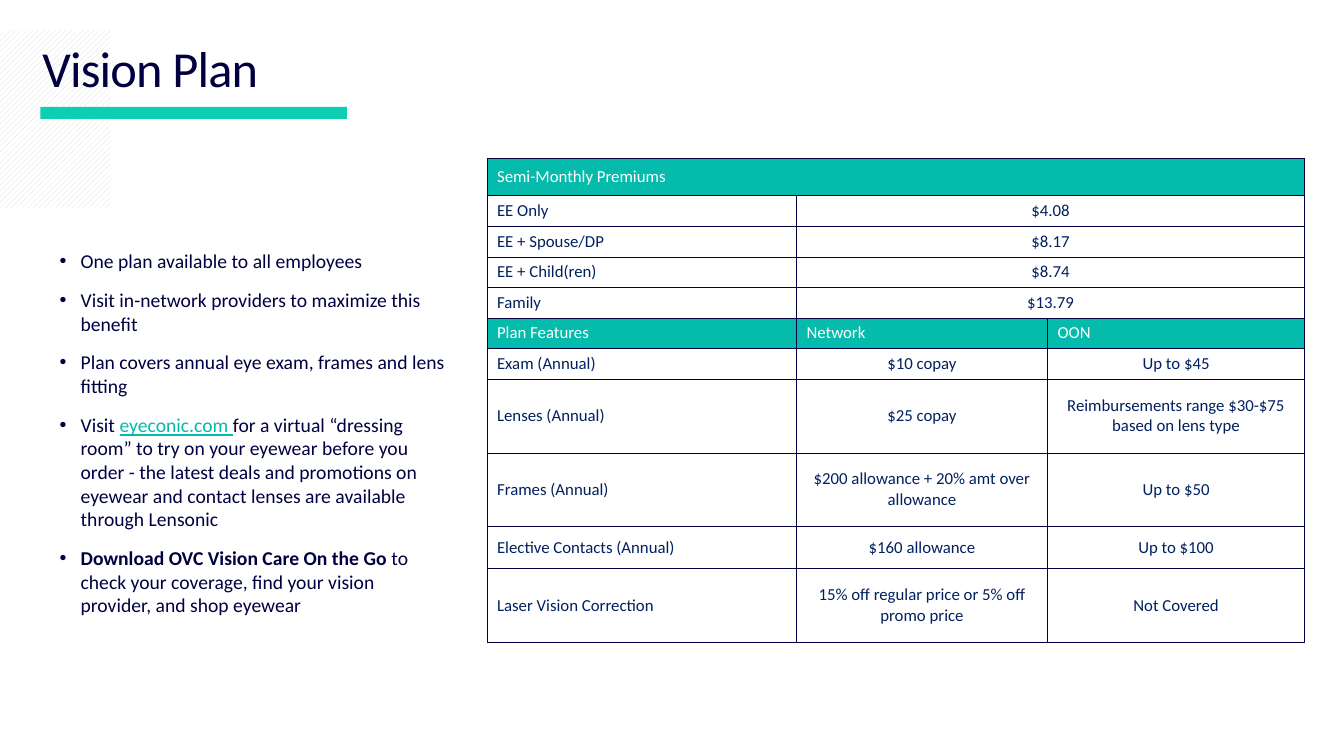
from dataclasses import dataclass, field
from typing import Any

from lxml.etree import SubElement
from pptx import Presentation
from pptx.dml.color import RGBColor
from pptx.enum.dml import MSO_PATTERN
from pptx.enum.shapes import MSO_SHAPE
from pptx.enum.text import MSO_ANCHOR, MSO_AUTO_SIZE, PP_ALIGN
from pptx.oxml import parse_xml
from pptx.oxml.ns import nsdecls, qn
from pptx.util import Inches, Pt

NAVY = RGBColor(0x00, 0x00, 0x41)
BLUE = RGBColor(0x00, 0x20, 0x60)
TEAL = RGBColor(0x05, 0xBB, 0xAC)
LINK = RGBColor(0x05, 0xBA, 0xAB)
ACCENT = RGBColor(0x0C, 0xCE, 0xB2)
GREY = RGBColor(0xD9, 0xD9, 0xD9)
WHITE = RGBColor(0xFF, 0xFF, 0xFF)
FONT = "Calibri"
COLUMNS = (3.07, 2.49, 2.55)


@dataclass
class Span:
    text: str
    color: RGBColor = NAVY
    format: dict[str, Any] = field(default_factory=dict)


@dataclass
class Row:
    cells: tuple[str, ...]
    height: float = 0.3
    header: bool = False


BULLETS = (
    (Span("One plan available to all employees"),),
    (Span("Visit in-network providers to maximize this benefit"),),
    (Span("Plan covers annual eye exam, frames and lens fitting"),),
    (
        Span("Visit "),
        Span("eyeconic.com ", LINK, {"underline": True}),
        Span(
            "for a virtual “dressing room” to try on your eyewear before you order - "
            "the latest deals and promotions on eyewear and contact lenses are "
            "available through Lensonic"
        ),
    ),
    (
        Span("Download OVC Vision Care On the Go ", format={"bold": True}),
        Span("to check your coverage, find your vision provider, and shop eyewear"),
    ),
)

ROWS = (
    Row(("Semi-Monthly Premiums",), 0.37, True),
    Row(("EE Only", "$4.08")),
    Row(("EE + Spouse/DP", "$8.17")),
    Row(("EE + Child(ren)", "$8.74")),
    Row(("Family", "$13.79")),
    Row(("Plan Features", "Network", "OON"), header=True),
    Row(("Exam (Annual)", "$10 copay", "Up to $45")),
    Row(("Lenses (Annual)", "$25 copay", "Reimbursements range $30-$75 based on lens type"), 0.73),
    Row(("Frames (Annual)", "$200 allowance + 20% amt over allowance", "Up to $50"), 0.73),
    Row(("Elective Contacts (Annual)", "$160 allowance", "Up to $100"), 0.42),
    Row(("Laser Vision Correction", "15% off regular price or 5% off promo price", "Not Covered"), 0.73),
)


def apply(target: Any, values: dict[str, Any]) -> None:
    for name, value in values.items():
        setattr(target, name, value)


def place(sp: Any, left: float, top: float, width: float, height: float) -> None:
    box = {"left": left, "top": top, "width": width, "height": height}
    apply(sp, {name: Inches(value) for name, value in box.items()})


def add_run(p: Any, span: Span, size: float) -> Any:
    r = p.add_run()
    r.text = span.text
    apply(r.font, {"name": FONT, "size": Pt(size), **span.format})
    r.font.color.rgb = span.color
    return r


def add_backdrop(s: Any, index: int, *box: float) -> Any:
    sp = s.shapes.add_shape(MSO_SHAPE.RECTANGLE, *map(Inches, box))
    sp.shadow.inherit = False
    sp.line.fill.background()
    s.shapes._spTree.insert(2 + index, sp._element)
    return sp


def add_decoration(s: Any) -> None:
    hatch = add_backdrop(s, 0, 0, 0.3, 1.1, 1.76).fill
    hatch.patterned()
    hatch.pattern = MSO_PATTERN.WIDE_UPWARD_DIAGONAL
    hatch.fore_color.rgb = GREY
    hatch.back_color.rgb = WHITE
    bar = add_backdrop(s, 1, 0.4, 1.06, 3.04, 0.12).fill
    bar.solid()
    bar.fore_color.rgb = ACCENT


def fill_title(sp: Any) -> None:
    place(sp, 0.32, 0.16, 10.02, 1.09)
    tf = sp.text_frame
    apply(tf, {"vertical_anchor": MSO_ANCHOR.MIDDLE, "auto_size": MSO_AUTO_SIZE.NONE})
    p = tf.paragraphs[0]
    apply(p, {"alignment": PP_ALIGN.LEFT, "line_spacing": 0.9})
    r = add_run(p, Span("Vision Plan"), 36)
    r.font._element.set("spc", "-60")


def fill_body(sp: Any) -> None:
    place(sp, 0.49, 2.42, 4.07, 4.16)
    tf = sp.text_frame
    apply(tf, {"vertical_anchor": MSO_ANCHOR.TOP, "auto_size": MSO_AUTO_SIZE.NONE, "word_wrap": True})
    for i, spans in enumerate(BULLETS):
        p = tf.add_paragraph() if i else tf.paragraphs[0]
        pPr = p._p.get_or_add_pPr()
        pPr.set("marL", str(Inches(0.21)))
        pPr.set("indent", str(-Inches(0.21)))
        SubElement(pPr, qn("a:buFont")).set("typeface", "Arial")
        SubElement(pPr, qn("a:buChar")).set("char", "•")
        apply(p, {"space_before": Pt(6 if i else 0), "space_after": Pt(5)})
        for span in spans:
            add_run(p, span, 14)


def add_borders(cell: Any) -> None:
    tcPr = cell._tc.get_or_add_tcPr()
    for i, side in enumerate(("lnL", "lnR", "lnT", "lnB")):
        tcPr.insert(i, parse_xml(
            f'<a:{side} {nsdecls("a")} w="{Pt(0.25)}"><a:solidFill>'
            f'<a:srgbClr val="{NAVY}"/></a:solidFill></a:{side}>'
        ))


def add_plan_table(s: Any) -> None:
    box = (4.83, 1.57, sum(COLUMNS), sum(row.height for row in ROWS))
    table = s.shapes.add_table(len(ROWS), len(COLUMNS), *map(Inches, box)).table
    apply(table, {"first_row": False, "horz_banding": False})
    for column, width in zip(table.columns, COLUMNS):
        column.width = Inches(width)
    for i, row in enumerate(ROWS):
        table.rows[i].height = Inches(row.height)
        for j in range(len(COLUMNS)):
            cell = table.cell(i, j)
            cell.fill.solid()
            cell.fill.fore_color.rgb = TEAL if row.header else WHITE
            add_borders(cell)
        for j, text in enumerate(row.cells):
            cell = table.cell(i, j)
            cell.vertical_anchor = MSO_ANCHOR.MIDDLE
            p = cell.text_frame.paragraphs[0]
            p.alignment = PP_ALIGN.CENTER if j and not row.header else PP_ALIGN.LEFT
            add_run(p, Span(text, WHITE if row.header else BLUE), 12)
        if len(row.cells) < len(COLUMNS):
            table.cell(i, len(row.cells) - 1).merge(table.cell(i, len(COLUMNS) - 1))


def main() -> None:
    prs = Presentation()
    apply(prs, {"slide_width": Inches(13.33), "slide_height": Inches(7.5)})
    s = prs.slides.add_slide(prs.slide_layouts[1])
    add_decoration(s)
    fill_title(s.shapes.title)
    fill_body(s.placeholders[1])
    add_plan_table(s)
    prs.save("out.pptx")


if __name__ == "__main__":
    main()
